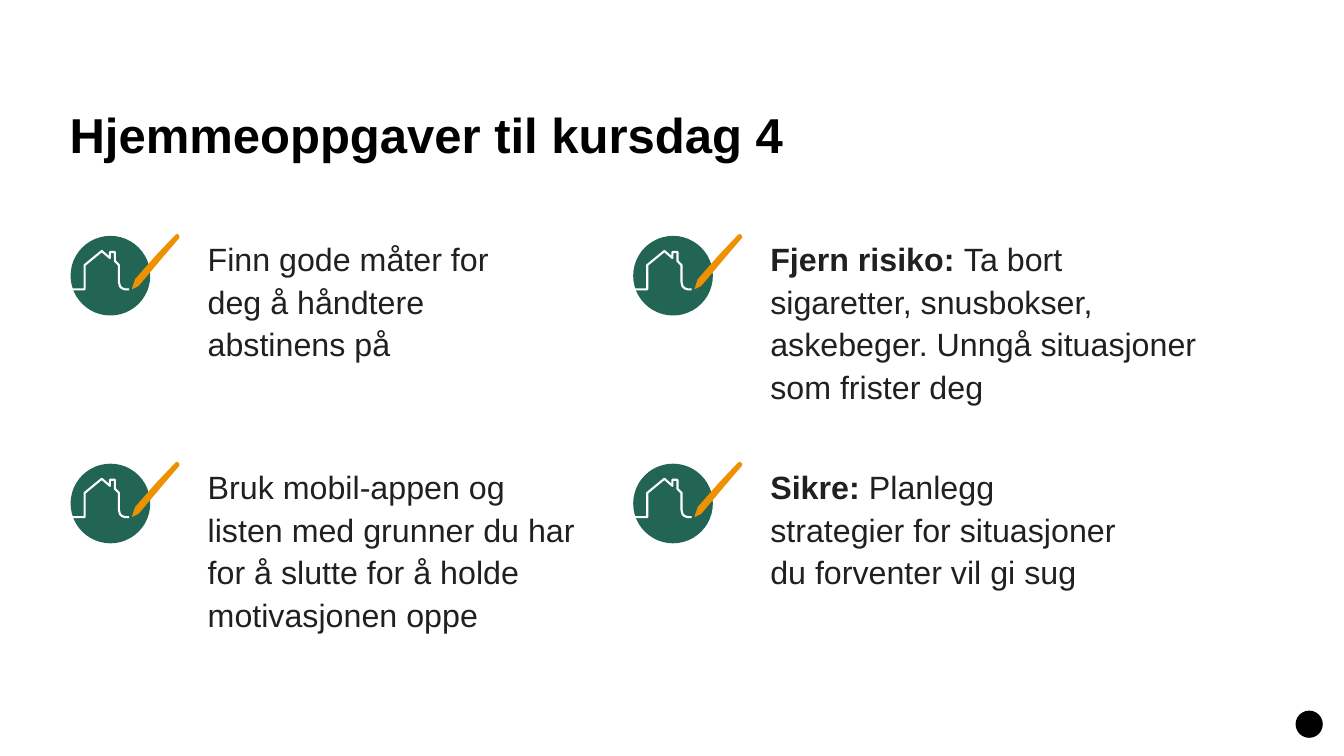
from pptx import Presentation
from pptx.dml.color import RGBColor
from pptx.enum import shapes, text
from pptx.util import Inches, Pt

GREEN, ORANGE, WHITE, BLACK, INK = "226555", "EE9100", "FFFFFF", "000000", "202020"

# Icon outlines in hundredths of an inch from the top left of the green disc
HOUSE = [(-2, 53), (14, 53), (14, 29), (31, 15), (39, 22), (39, 16), (44, 16),
         (44, 25), (48, 29), (48, 46), (49, 50), (51, 52), (54, 53), (58, 53)]
PENCIL_SHAFT = [(90, 23), (108, 2), (108, 0), (107, -1), (106, -2), (104, -1), (85, 19)]
PENCIL_TIP = [(63, 46), (61, 52), (61, 53), (67, 50), (69, 48), (90, 23), (85, 19), (64, 43)]

COLUMNS = (0.70, 6.28)
ROWS = (2.34, 4.60)
DISC = 0.79
TEXT_OFFSET = 1.36

# column, row, text width, text height, bold lead, text
TASKS = [
    (0, 0, 3.30, 1.24, "", "Finn gode måter for deg å håndtere abstinens på"),
    (1, 0, 4.27, 1.67, "Fjern risiko: ",
     "Ta bort sigaretter, snusbokser, askebeger. Unngå situasjoner som frister deg"),
    (0, 1, 3.75, 1.67, "",
     "Bruk mobil-appen og listen med grunner du har for å slutte for å holde motivasjonen oppe"),
    (1, 1, 3.54, 1.24, "Sikre: ",
     "Planlegg strategier for situasjoner du forventer vil gi sug"),
]

deck = Presentation()
deck.slide_width, deck.slide_height = Inches(13.33), Inches(7.5)
slide = deck.slides.add_slide(deck.slide_layouts[6])


def paint(shape, fill=None, line=None):
    """Set fill and line from hex strings; None leaves that part empty."""
    shape.shadow.inherit = False
    if fill:
        shape.fill.solid()
        shape.fill.fore_color.rgb = RGBColor.from_string(fill)
    else:
        shape.fill.background()
    if line:
        shape.line.color.rgb = RGBColor.from_string(line)
        shape.line.width = Pt(1.5)
    else:
        shape.line.fill.background()


def write(left, top, width, height, pieces, size, color, spacing):
    """Add a text box without margins; pieces are (text, bold) pairs."""
    box = slide.shapes.add_textbox(*map(Inches, (left, top, width, height)))
    frame = box.text_frame
    frame.word_wrap = True
    frame.margin_left = frame.margin_right = frame.margin_top = frame.margin_bottom = 0
    paragraph = frame.paragraphs[0]
    paragraph.line_spacing = spacing
    for words, bold in pieces:
        run = paragraph.add_run()
        run.text = words
        run.font.name, run.font.size, run.font.bold = "Arial", Pt(size), bold
        run.font.color.rgb = RGBColor.from_string(color)
    return frame


heading = write(0.69, 0.35, 11.96, 1.27, [("Hjemmeoppgaver til kursdag 4", True)], 35, BLACK, 0.85)
heading.vertical_anchor = text.MSO_ANCHOR.BOTTOM

for column, row, width, height, lead, task in TASKS:
    left, top = COLUMNS[column], ROWS[row]

    disc = slide.shapes.add_shape(shapes.MSO_SHAPE.OVAL, *map(Inches, (left, top, DISC, DISC)))
    paint(disc, GREEN)
    for outline, closed, fill, line in ((HOUSE, False, None, WHITE),
                                        (PENCIL_SHAFT, True, ORANGE, None),
                                        (PENCIL_TIP, True, ORANGE, None)):
        points = [(round(left * 100) + x, round(top * 100) + y) for x, y in outline]
        builder = slide.shapes.build_freeform(*points[0], scale=Inches(0.01))
        builder.add_line_segments(points[1:], close=closed)
        paint(builder.convert_to_shape(), fill, line)

    pieces = [(lead, True), (task, False)] if lead else [(task, False)]
    body = write(left + TEXT_OFFSET, top, width, height, pieces, 23, INK, 1.1)
    body.auto_size = text.MSO_AUTO_SIZE.SHAPE_TO_FIT_TEXT

emblem = slide.shapes.add_shape(shapes.MSO_SHAPE.OVAL, *map(Inches, (12.85, 7.05, 0.27, 0.27)))
paint(emblem, BLACK)

deck.save("out.pptx")
